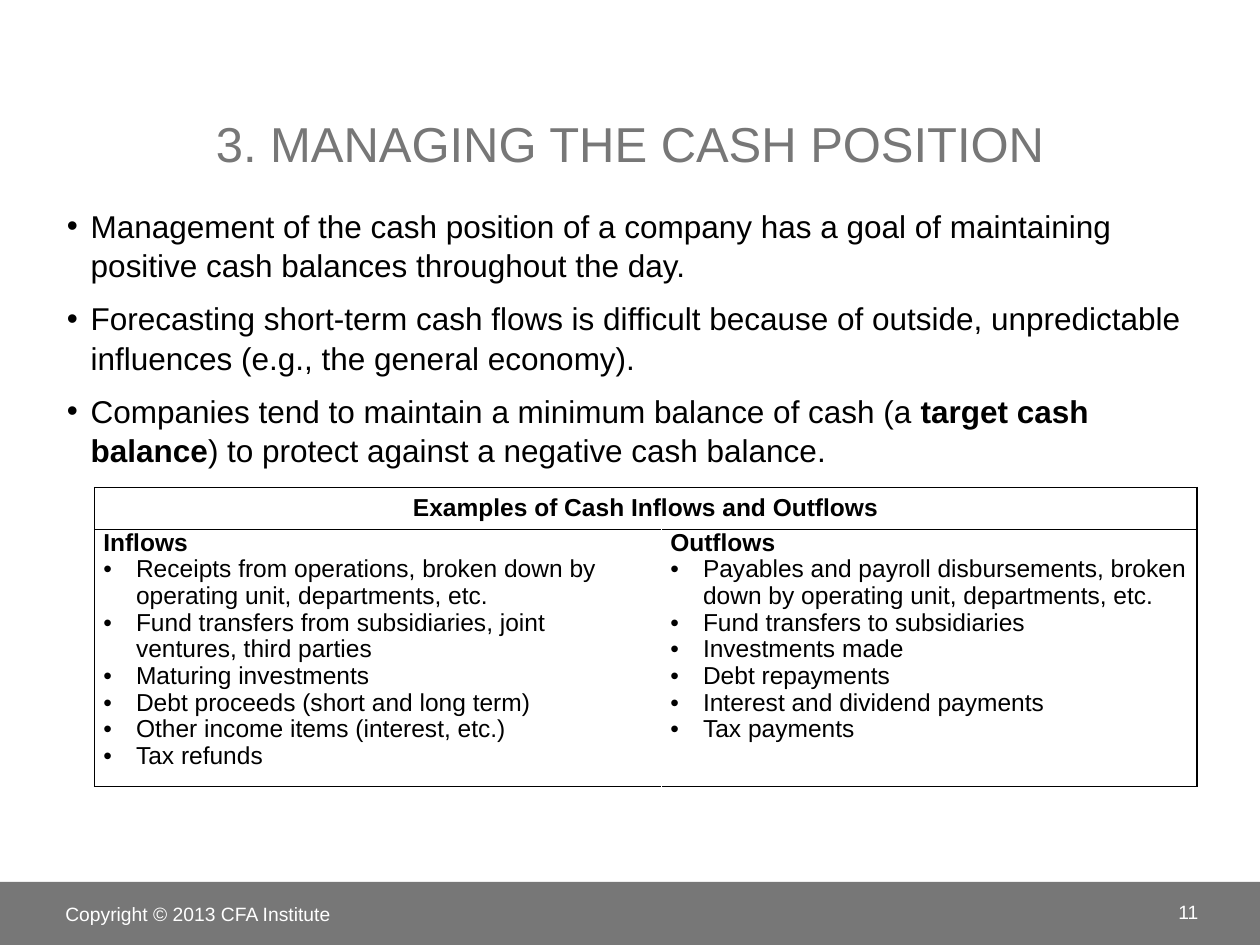
from lxml import etree
from pptx import Presentation
from pptx.dml.color import RGBColor
from pptx.enum import shapes, text
from pptx.oxml import ns
from pptx.util import Inches, Pt

hex_color = RGBColor.from_string
GRAY, BLACK, WHITE = "777777", "000000", "FFFFFF"


def write(frame, content, size=14, color=BLACK, bold=False, align=text.PP_ALIGN.LEFT,
          indent=None, before=0, spacing=1.0, first=True):
    """Write one paragraph; **marks** in the content switch bold on and off."""
    paragraph = frame.paragraphs[0] if first else frame.add_paragraph()
    paragraph.alignment = align
    if indent:
        left, hanging = indent
        props = paragraph._p.get_or_add_pPr()
        props.set("marL", str(Inches(left)))
        props.set("indent", str(Inches(hanging)))
        etree.SubElement(props, ns.qn("a:buFont")).set("typeface", "Arial")
        etree.SubElement(props, ns.qn("a:buChar")).set("char", "•")
    paragraph.space_before = Pt(0 if first else before)
    paragraph.space_after = Pt(0)
    paragraph.line_spacing = spacing
    for i, part in enumerate(content.split("**")):
        run = paragraph.add_run()
        run.text = part
        run.font.name = "Arial"
        run.font.size = Pt(size)
        run.font.bold = bold or i % 2 == 1
        run.font.color.rgb = hex_color(color)


def set_borders(cell, **colors):
    """Draw 1 pt borders; sides are given as L, R, T, B in that order."""
    props = cell._tc.get_or_add_tcPr()
    for i, (side, color) in enumerate(colors.items()):
        line = etree.Element(ns.qn(f"a:ln{side}"), w=str(Pt(1)))
        fill = etree.SubElement(line, ns.qn("a:solidFill"))
        etree.SubElement(fill, ns.qn("a:srgbClr")).set("val", color)
        props.insert(i, line)


prs = Presentation()
prs.slide_width, prs.slide_height = Inches(10), Inches(7.5)
slide = prs.slides.add_slide(prs.slide_layouts[1])

# Footer band
band = slide.shapes.add_shape(shapes.MSO_SHAPE.RECTANGLE, 0, Inches(7), Inches(10), Inches(0.5))
band.shadow.inherit = False
band.fill.solid()
band.fill.fore_color.rgb = hex_color(GRAY)
band.line.fill.background()

# Title
title = slide.shapes.title
title.left, title.top, title.width, title.height = map(Inches, (0.42, 0.17, 9.16, 1.25))
title.text_frame.vertical_anchor = text.MSO_ANCHOR.BOTTOM
title.text_frame.auto_size = text.MSO_AUTO_SIZE.NONE
write(title.text_frame, "3. MANAGING THE CASH POSITION", size=28, color=GRAY,
      align=text.PP_ALIGN.CENTER)

# Main points
body = slide.placeholders[1]
body.left, body.top, body.width, body.height = map(Inches, (0.42, 1.58, 9.16, 5.17))
body.text_frame.auto_size = text.MSO_AUTO_SIZE.NONE
points = [
    "Management of the cash position of a company has a goal of maintaining positive cash "
    "balances throughout the day.",
    "Forecasting short-term cash flows is difficult because of outside, unpredictable "
    "influences (e.g., the general economy).",
    "Companies tend to maintain a minimum balance of cash (a **target cash balance**) "
    "to protect against a negative cash balance.",
]
for i, point in enumerate(points):
    write(body.text_frame, point, size=18, indent=(0.2, -0.19), before=8, spacing=1.04,
          first=i == 0)

# Copyright and page number
for content, box, align in [
    ("Copyright © 2013 CFA Institute", (0.42, 7.03, 3.17, 0.44), text.PP_ALIGN.LEFT),
    ("11", (8.75, 7.04, 0.86, 0.4), text.PP_ALIGN.RIGHT),
]:
    footer = slide.shapes.add_textbox(*map(Inches, box)).text_frame
    footer.word_wrap = True
    footer.vertical_anchor = text.MSO_ANCHOR.MIDDLE
    write(footer, content, size=11, color=WHITE, align=align)

# Table of cash flows
flows = {
    "Inflows": [
        "Receipts from operations, broken down by operating unit, departments, etc.",
        "Fund transfers from subsidiaries, joint ventures, third parties",
        "Maturing investments",
        "Debt proceeds (short and long term)",
        "Other income items (interest, etc.)",
        "Tax refunds",
    ],
    "Outflows": [
        "Payables and payroll disbursements, broken down by operating unit, departments, etc.",
        "Fund transfers to subsidiaries",
        "Investments made",
        "Debt repayments",
        "Interest and dividend payments",
        "Tax payments",
    ],
}
table = slide.shapes.add_table(2, 2, Inches(0.75), Inches(3.87), Inches(8.75), Inches(2.27)).table
table.first_row = table.horz_banding = False
for column, width in zip(table.columns, (4.5, 4.25)):
    column.width = Inches(width)
for row, height in zip(table.rows, (0.3, 1.97)):
    row.height = Inches(height)

heading = table.cell(0, 0)
heading.merge(table.cell(0, 1))
heading.margin_left = heading.margin_right = Inches(0.05)
heading.margin_top = heading.margin_bottom = Inches(0.05)
write(heading.text_frame, "Examples of Cash Inflows and Outflows", bold=True,
      align=text.PP_ALIGN.CENTER)

for col, (kind, items) in enumerate(flows.items()):
    cell = table.cell(1, col)
    cell.margin_left = cell.margin_right = Inches(0.07)
    cell.margin_top = cell.margin_bottom = 0
    write(cell.text_frame, kind, bold=True, spacing=0.97)
    for item in items:
        write(cell.text_frame, item, indent=(0.26, -0.26), spacing=0.97, first=False)
    set_borders(table.cell(0, col), L=BLACK, R=BLACK, T=BLACK, B=BLACK)
    set_borders(cell, L=WHITE if col else BLACK, R=BLACK if col else WHITE, T=BLACK, B=BLACK)

for cell in table.iter_cells():
    cell.fill.background()

prs.save("out.pptx")
